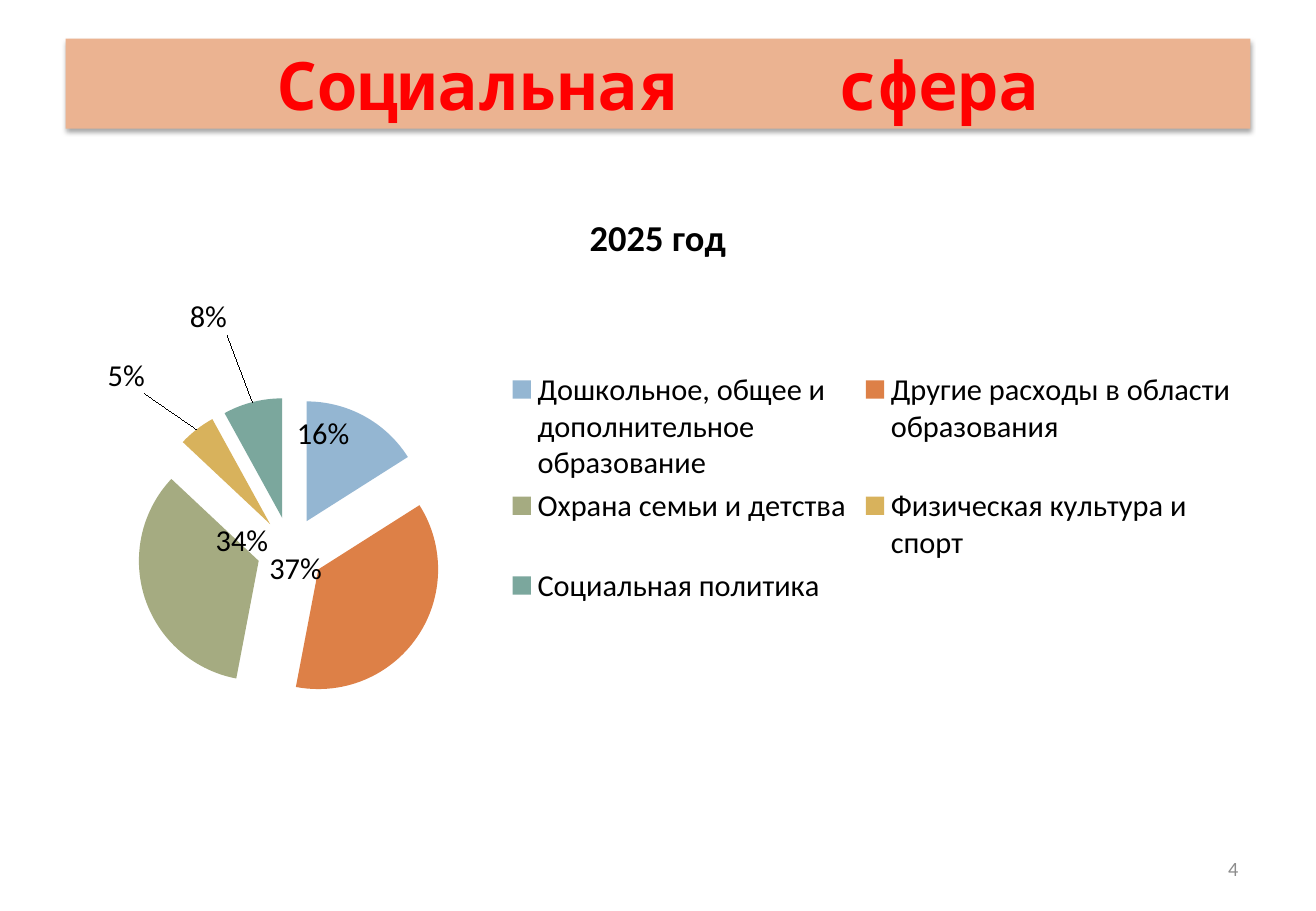
from lxml import etree
from pptx import Presentation
from pptx import util as u
from pptx.chart.data import CategoryChartData
from pptx.dml.color import RGBColor
from pptx.enum import chart as charts, text
from pptx.oxml import parse_xml
from pptx.oxml.ns import nsdecls, qn

YEAR = "2025 год"
# Category, percent, colour, label shift as a share of the chart (x, y)
SPENDING = [
    ("Дошкольное, общее и дополнительное образование", 16, "94B6D2", (-0.06, 0.07)),
    ("Другие расходы в области образования", 37, "DD8047", (-0.13, -0.15)),
    ("Охрана семьи и детства", 34, "A5AB81", (0.11, -0.13)),
    ("Физическая культура и спорт", 5, "D8B25C", (-0.04, -0.05)),
    ("Социальная политика", 8, "7BA79D", (-0.02, -0.1)),
]


def colour(value):
    return RGBColor.from_string(value)


def style(font, size, shade, name="Calibri", bold=False):
    font.name, font.size, font.bold = name, u.Pt(size), bold
    font.color.rgb = colour(shade)


def set_layout(parent, index, values):
    """Give a chart part a manual layout in shares of the chart."""
    for old in parent.findall(qn("c:layout")):
        parent.remove(old)
    layout = parse_xml(f"<c:layout {nsdecls('c')}><c:manualLayout/></c:layout>")
    for tag, value in values.items():
        etree.SubElement(layout[0], qn(f"c:{tag}")).set("val", str(value))
    parent.insert(index, layout)


def add_heading(page, left, top, width, height):
    title = page.shapes.title
    title.left, title.top, title.width, title.height = left, top, width, height
    title.fill.solid()
    title.fill.fore_color.rgb = colour("EBB391")
    title._element.spPr.append(parse_xml(
        f'<a:effectLst {nsdecls("a")}><a:outerShdw blurRad="{u.Pt(3.1)}" '
        f'dist="{u.Pt(1.8)}" dir="5400000" rotWithShape="0"><a:srgbClr val="000000">'
        '<a:alpha val="35000"/></a:srgbClr></a:outerShdw></a:effectLst>'))
    frame = title.text_frame
    frame.vertical_anchor = text.MSO_ANCHOR.MIDDLE
    frame.auto_size = text.MSO_AUTO_SIZE.NONE
    para = frame.paragraphs[0]
    para.alignment = text.PP_ALIGN.CENTER
    for part in ("Социальная", " ", "сфера"):
        span = para.add_run()
        span.text = part
        style(span.font, 39.6, "FF0000", "Noto Sans Mono", True)
        if part == " ":  # one space, widened to four characters
            span.font._element.set("spc", "7130")


def add_labels(series):
    labels = series.data_labels
    labels.show_percentage, labels.show_value = True, False
    labels.number_format, labels.number_format_is_linked = "0%", False
    labels.position = charts.XL_LABEL_POSITION.OUTSIDE_END
    style(labels.font, 18, "000000")
    flags = "".join(
        f'<c:show{name} val="{int(name == "Percent")}"/>'
        for name in ("LegendKey", "Val", "CatName", "SerName", "Percent", "BubbleSize"))
    for index, (_, _, _, (x, y)) in enumerate(SPENDING):
        label = parse_xml(f'<c:dLbl {nsdecls("c")}><c:idx val="{index}"/>'
                          f'<c:dLblPos val="outEnd"/>{flags}</c:dLbl>')
        set_layout(label, 1, {"x": x, "y": y})
        labels._element.insert(index, label)


def add_spending_pie(page, left, top, width, height):
    data = CategoryChartData(number_format="0")
    data.categories = [row[0] for row in SPENDING]
    data.add_series(YEAR, [row[1] for row in SPENDING])
    chart = page.shapes.add_chart(
        charts.XL_CHART_TYPE.PIE, left, top, width, height, data).chart
    style(chart.font, 18, "000000")
    set_layout(chart._chartSpace.chart.plotArea, 0, {
        "layoutTarget": "inner", "xMode": "edge", "yMode": "edge",
        "x": 0.06, "y": 0.35, "w": 0.26, "h": 0.51})

    # Chart title
    chart.has_title = True
    chart.chart_title.include_in_layout = False
    span = chart.chart_title.text_frame.paragraphs[0].add_run()
    span.text = YEAR
    style(span.font, 21.6, "000000", bold=True)

    # Legend
    chart.has_legend = True
    chart.legend.position = charts.XL_LEGEND_POSITION.RIGHT
    chart.legend.include_in_layout = False
    style(chart.legend.font, 18, "000000")

    # Slices, pulled apart
    plot = chart.plots[0]
    plot.vary_by_categories = True
    series = plot.series[0]
    for index, row in enumerate(SPENDING):
        fill = series.points[index].format.fill
        fill.solid()
        fill.fore_color.rgb = colour(row[2])
    points = series._element.findall(qn("c:dPt"))
    for follower in [points[0]] + [point.find(qn("c:spPr")) for point in points]:
        follower.addprevious(parse_xml(f'<c:explosion {nsdecls("c")} val="28"/>'))
    add_labels(series)


def add_page_number(page, left, top, width, height):
    box = page.shapes.add_textbox(left, top, width, height)
    frame = box.text_frame
    frame.word_wrap = True
    frame.vertical_anchor = text.MSO_ANCHOR.MIDDLE
    para = frame.paragraphs[0]
    para.alignment = text.PP_ALIGN.RIGHT
    span = para.add_run()
    span.text = "4"
    style(span.font, 12, "8C8C8C")


def main():
    deck = Presentation()
    deck.slide_width, deck.slide_height = u.Cm(27.51), u.Cm(19.05)
    page = deck.slides.add_slide(deck.slide_layouts[5])
    margin = u.Cm(1.37)
    width = deck.slide_width - 2 * margin
    add_heading(page, margin, u.Cm(0.81), width, u.Cm(1.88))
    add_spending_pie(page, margin, u.Cm(3.91), width, u.Cm(12.57))
    number_width = u.Cm(6.43)
    add_page_number(page, margin + width - number_width, u.Cm(17.65),
                    number_width, u.Cm(1.02))
    deck.save("out.pptx")


if __name__ == "__main__":
    main()
